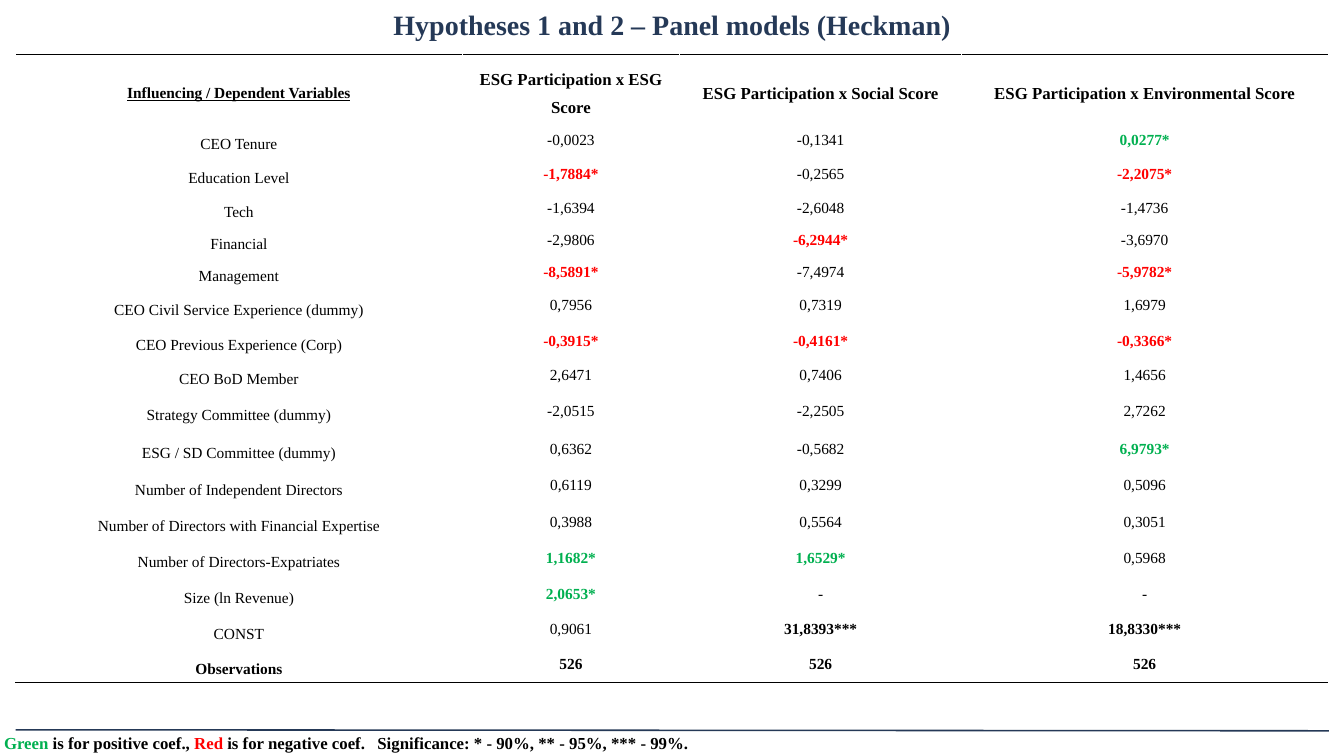
from pptx import Presentation
from pptx.dml.color import RGBColor
from pptx.enum.shapes import MSO_CONNECTOR as Connector
from pptx.enum.text import MSO_ANCHOR as Anchor, PP_ALIGN as Align
from pptx.oxml import parse_xml
from pptx.oxml.ns import nsdecls
from pptx.util import Emu, Pt

PX = 9144  # 100 px to the inch
NAVY, BLACK, GREEN, RED = "253957", "000000", "00B050", "FF0000"

HEADINGS = [
    "Influencing / Dependent Variables",
    "ESG Participation x ESG Score",
    "ESG Participation x Social Score",
    "ESG Participation x Environmental Score",
]
RESULTS = [
    ("CEO Tenure", "-0,0023", "-0,1341", "0,0277*"),
    ("Education Level", "-1,7884*", "-0,2565", "-2,2075*"),
    ("Tech", "-1,6394", "-2,6048", "-1,4736"),
    ("Financial", "-2,9806", "-6,2944*", "-3,6970"),
    ("Management", "-8,5891*", "-7,4974", "-5,9782*"),
    ("CEO Civil Service Experience (dummy)", "0,7956", "0,7319", "1,6979"),
    ("CEO Previous Experience (Corp)", "-0,3915*", "-0,4161*", "-0,3366*"),
    ("CEO BoD Member", "2,6471", "0,7406", "1,4656"),
    ("Strategy Committee (dummy)", "-2,0515", "-2,2505", "2,7262"),
    ("ESG / SD Committee (dummy)", "0,6362", "-0,5682", "6,9793*"),
    ("Number of Independent Directors", "0,6119", "0,3299", "0,5096"),
    ("Number of Directors with Financial Expertise", "0,3988", "0,5564", "0,3051"),
    ("Number of Directors-Expatriates", "1,1682*", "1,6529*", "0,5968"),
    ("Size (ln Revenue)", "2,0653*", "-", "-"),
    ("CONST", "0,9061", "31,8393***", "18,8330***"),
    ("Observations", "526", "526", "526"),
]
COLUMN_WIDTHS = [886, 432, 559, 727]
ROW_HEIGHTS = [138, 64, 72, 63, 63, 63, 71, 71, 64, 79, 72, 72, 72, 72, 72, 67, 72]
SPACED_LABELS = range(13, 16)


def px(length):
    return Emu(length * PX)


def rgb(value):
    return RGBColor.from_string(value)


def coefficient_color(value):
    """Significant coefficients are coloured by sign; the constant stays black."""
    if value.endswith("*") and not value.endswith("***"):
        return RED if value.startswith("-") else GREEN
    return BLACK


class Deck:
    font = "Times New Roman"

    def __init__(self, width, height):
        self.prs = Presentation()
        self.prs.slide_width, self.prs.slide_height = px(width), px(height)
        self.slide = self.prs.slides.add_slide(self.prs.slide_layouts[6])

    def style(self, run, size, color=BLACK, bold=False, underline=None):
        font = run.font
        font.name, font.size, font.bold = self.font, Pt(size), bold
        font.underline = underline
        font.color.rgb = rgb(color)

    def text(self, x, y, w, h, pieces, size, align=Align.LEFT, tab=None):
        frame = self.slide.shapes.add_textbox(px(x), px(y), px(w), px(h)).text_frame
        frame.word_wrap = True
        frame.vertical_anchor = Anchor.MIDDLE
        frame.margin_left = frame.margin_right = px(8)
        frame.margin_top = frame.margin_bottom = px(8)
        paragraph = frame.paragraphs[0]
        paragraph.alignment = align
        if tab:
            paragraph._p.get_or_add_pPr().append(parse_xml(
                f'<a:tabLst {nsdecls("a")}><a:tab pos="{px(tab)}" algn="l"/></a:tabLst>'))
        for words, color in pieces:
            run = paragraph.add_run()
            run.text = words
            self.style(run, size, color, bold=True)

    def line(self, x1, y1, x2, y2, color, width):
        rule = self.slide.shapes.add_connector(
            Connector.STRAIGHT, px(x1), px(y1), px(x2), px(y2))
        rule.line.color.rgb = rgb(color)
        rule.line.width = Pt(width)
        rule._element.spPr.append(parse_xml(f'<a:effectLst {nsdecls("a")}/>'))

    def table(self, x, y, widths, heights):
        table = self.slide.shapes.add_table(
            len(heights), len(widths), px(x), px(y),
            px(sum(widths)), px(sum(heights))).table
        table.first_row = table.horz_banding = False
        for column, width in zip(table.columns, widths):
            column.width = px(width)
        for row, height in zip(table.rows, heights):
            row.height = px(height)
        return table

    def cell(self, cell, words, size=22, spacing=None, after=None, **look):
        cell.fill.background()
        cell.vertical_anchor = Anchor.MIDDLE
        cell.margin_left = cell.margin_right = px(5)
        cell.margin_top = cell.margin_bottom = 0
        cell.text_frame.text = words
        paragraph = cell.text_frame.paragraphs[0]
        paragraph.alignment = Align.CENTER
        if spacing:
            paragraph.line_spacing = spacing
        if after:
            paragraph.space_after = Pt(after)
        self.style(paragraph.runs[0], size, **look)

    def border(self, cell, side, color=BLACK, width=1):
        cell._tc.get_or_add_tcPr().insert(0, parse_xml(
            f'<a:ln{side} {nsdecls("a")} w="{Pt(width)}"><a:solidFill>'
            f'<a:srgbClr val="{color}"/></a:solidFill></a:ln{side}>'))


def main():
    deck = Deck(2667, 1500)

    # Title
    deck.text(0, 7, 2667, 83, [("Hypotheses 1 and 2 – Panel models (Heckman)", NAVY)],
              40, Align.CENTER)

    # Column headings
    models = deck.table(31, 108, COLUMN_WIDTHS, ROW_HEIGHTS)
    for c, heading in enumerate(HEADINGS):
        is_label = c == 0
        deck.cell(models.cell(0, c), heading, 22 if is_label else 24, 1.5,
                  bold=True, underline=is_label)
        deck.border(models.cell(0, c), "T")

    # Coefficients
    for r, (label, *values) in enumerate(RESULTS, 1):
        is_last = r == len(RESULTS)
        deck.cell(models.cell(r, 0), label, spacing=1.5,
                  after=10 if r in SPACED_LABELS else None, bold=is_last)
        for c, value in enumerate(values, 1):
            deck.cell(models.cell(r, c), value, color=coefficient_color(value),
                      bold=is_last or value.endswith("*"))
    for c in range(len(HEADINGS)):
        deck.border(models.cell(len(RESULTS), c), "B")

    # Footer rule and legend
    deck.line(31, 1448, 2637, 1450, NAVY, 2.25)
    deck.text(0, 1446, 2667, 56, [
        ("Green ", GREEN),
        ("is for positive coef., ", BLACK),
        ("Red ", RED),
        ("is for negative coef.\tSignificance: * - 90%, ** - 95%, *** - 99%.", BLACK),
    ], 24, tab=741)

    deck.prs.save("out.pptx")


if __name__ == "__main__":
    main()
